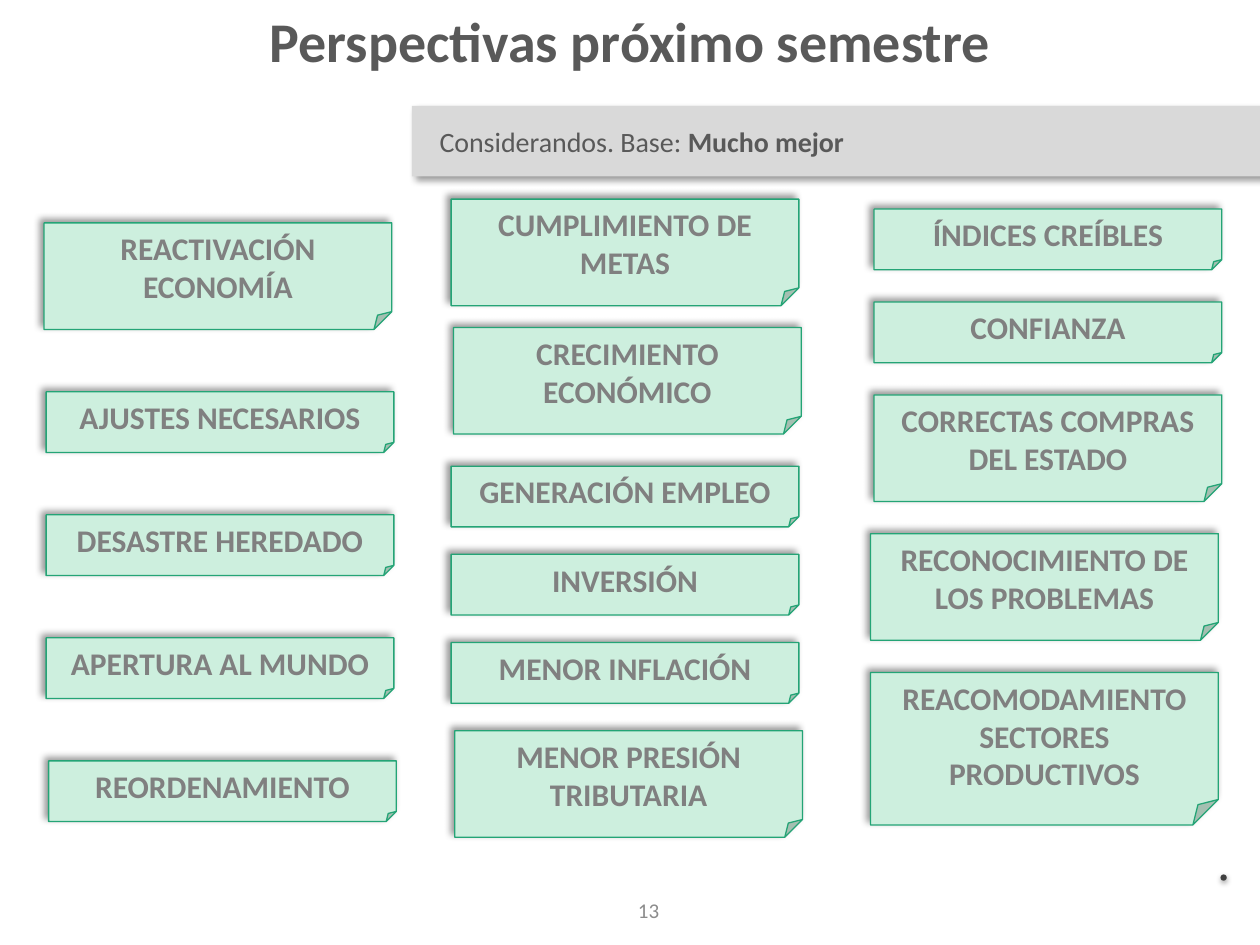
from dataclasses import dataclass

from lxml.etree import SubElement
from pptx import Presentation
from pptx.dml.color import RGBColor
from pptx.enum.shapes import MSO_SHAPE as Shape
from pptx.enum.text import MSO_ANCHOR as Anchor, MSO_AUTO_SIZE as AutoSize, PP_ALIGN as Align
from pptx.oxml.ns import qn
from pptx.util import Pt

FONT = "Calibri"
NOTE_WIDTH = 198.7
LINE_HEIGHT = 26.2
NOTE_PADDING = 8.5


@dataclass
class Note:
    text: str
    left: float
    lines: int = 1

    @property
    def height(self) -> float:
        return NOTE_PADDING + LINE_HEIGHT * self.lines


@dataclass
class Stack:
    top: float
    gap: float
    notes: list[Note]


@dataclass
class Shadow:
    alpha: int
    blur: float
    distance: float
    angle: int


STACKS = [
    Stack(127.4, 35.6, [
        Note("REACTIVACIÓN ECONOMÍA", 25.2, 2),
        Note("AJUSTES NECESARIOS", 26.4),
        Note("DESASTRE HEREDADO", 26.4),
        Note("APERTURA AL MUNDO", 26.4),
        Note("REORDENAMIENTO", 27.8),
    ]),
    Stack(113.8, 12.5, [
        Note("CUMPLIMIENTO DE METAS", 257.8, 2),
        Note("CRECIMIENTO ECONÓMICO", 259.2, 2),
    ]),
    Stack(266.4, 15.7, [
        Note("GENERACIÓN EMPLEO", 257.8),
        Note("INVERSIÓN", 257.8),
        Note("MENOR INFLACIÓN", 257.8),
        Note("MENOR PRESIÓN TRIBUTARIA", 259.9, 2),
    ]),
    Stack(119.5, 18.4, [
        Note("ÍNDICES CREÍBLES", 499.5),
        Note("CONFIANZA", 499.5),
        Note("CORRECTAS COMPRAS DEL ESTADO", 499.5, 2),
        Note("RECONOCIMIENTO DE LOS PROBLEMAS", 497.5, 2),
        Note("REACOMODAMIENTO SECTORES PRODUCTIVOS", 497.5, 3),
    ]),
]


def color(value: str) -> RGBColor:
    return RGBColor.from_string(value)


def place(shape, left: float, top: float, width: float, height: float) -> None:
    shape.left, shape.top = Pt(left), Pt(top)
    shape.width, shape.height = Pt(width), Pt(height)


def format_text(paragraph, size: float, font_color: str, bold: bool, align) -> None:
    paragraph.alignment = align
    for run in paragraph.runs:
        run.font.name, run.font.size, run.font.bold = FONT, Pt(size), bold
        run.font.color.rgb = color(font_color)


def add_shape(slide, kind, box: tuple, fill: str, shadow: Shadow, line: str = ""):
    shape = slide.shapes.add_shape(kind, *(Pt(value) for value in box))
    shape.fill.solid()
    shape.fill.fore_color.rgb = color(fill)
    if line:
        shape.line.color.rgb = color(line)
        shape.line.width = Pt(0.75)
    else:
        shape.line.fill.background()
    # Outer shadow
    shape.shadow.inherit = False
    effects = shape.element.spPr.find(qn("a:effectLst"))
    outer = SubElement(effects, qn("a:outerShdw"), blurRad=str(Pt(shadow.blur)),
                       dist=str(Pt(shadow.distance)), dir=str(shadow.angle * 60000),
                       algn="ctr", rotWithShape="0")
    shade = SubElement(outer, qn("a:srgbClr"), val="000000")
    SubElement(shade, qn("a:alpha"), val=str(shadow.alpha * 1000))
    return shape


def add_stack(slide, stack: Stack) -> None:
    top = stack.top
    for note in stack.notes:
        shape = add_shape(slide, Shape.FOLDED_CORNER, (note.left, top, NOTE_WIDTH, note.height),
                          "CDEFDE", Shadow(40, 4, 3, 225), "24A476")
        frame = shape.text_frame
        frame.text = note.text
        frame.word_wrap = True
        frame.vertical_anchor = Anchor.TOP
        frame.auto_size = AutoSize.SHAPE_TO_FIT_TEXT
        format_text(frame.paragraphs[0], 18, "808080", True, Align.CENTER)
        top += note.height + stack.gap


def add_banner(slide) -> None:
    banner = add_shape(slide, Shape.RECTANGLE, (235.4, 60.5, 501, 40.3),
                       "D9D9D9", Shadow(40, 4, 3, 45))
    frame = banner.text_frame
    frame.word_wrap = True
    frame.margin_left = Pt(15.8)
    frame.vertical_anchor = Anchor.MIDDLE
    paragraph = frame.paragraphs[0]
    paragraph.text = "Considerandos. Base: "
    paragraph.add_run().text = "Mucho mejor"
    format_text(paragraph, 16, "595959", False, Align.LEFT)
    paragraph.runs[1].font.bold = True


def add_page_number(slide) -> None:
    box = slide.shapes.add_textbox(Pt(216), Pt(500.4), Pt(167.8), Pt(39.6))
    frame = box.text_frame
    frame.word_wrap = True
    frame.vertical_anchor = Anchor.MIDDLE
    frame.text = "13"
    format_text(frame.paragraphs[0], 12, "8C8C8C", False, Align.RIGHT)


def main() -> None:
    presentation = Presentation()
    presentation.slide_width, presentation.slide_height = Pt(720), Pt(540)
    slide = presentation.slides.add_slide(presentation.slide_layouts[5])

    # Title
    title = slide.shapes.title
    place(title, 0, 0, 720, 46)
    title.text_frame.text = "Perspectivas próximo semestre"
    title.text_frame.vertical_anchor = Anchor.TOP
    title.text_frame.auto_size = AutoSize.SHAPE_TO_FIT_TEXT
    format_text(title.text_frame.paragraphs[0], 32, "595959", True, Align.CENTER)

    # Banner, notes and footer
    add_banner(slide)
    for stack in STACKS:
        add_stack(slide, stack)
    add_page_number(slide)
    add_shape(slide, Shape.OVAL, (697.4, 499.7, 3.6, 3.6), "404040", Shadow(38, 3.1, 1.6, 90))

    presentation.save("out.pptx")


if __name__ == "__main__":
    main()
